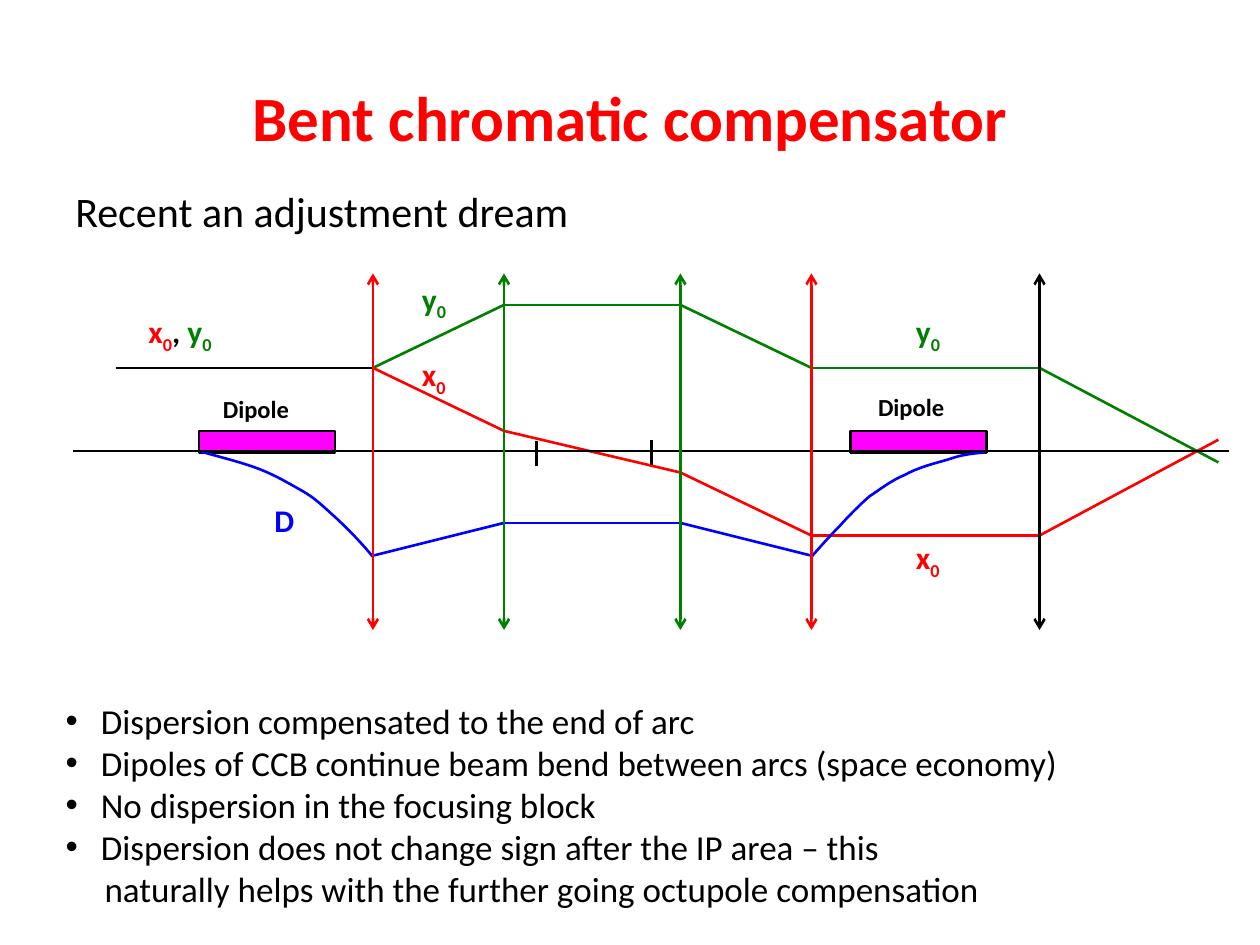
import lxml.etree
import pptx
import pptx.util
import pptx.dml.color
import pptx.enum.shapes
import pptx.enum.text
import pptx.oxml.ns
from dataclasses import dataclass
from pptx.util import Inches


@dataclass(frozen=True)
class Theme:
    font: str = "Calibri"
    black: str = "000000"
    red: str = "FF0000"
    green: str = "008000"
    blue: str = "0000FF"
    magenta: str = "FF00FF"
    title: int = 36
    heading: int = 24
    body: int = 20
    label: int = 18
    small: int = 14
    line: float = 1.5


T = Theme()


def rgb(color):
    return pptx.dml.color.RGBColor.from_string(color)


def add_xml(parent, tag, **attrs):
    lxml.etree.SubElement(parent, pptx.oxml.ns.qn(tag), attrs)


def bezier(p0, p1, p2, p3, steps=8):
    """Points along a cubic curve, without its first point."""
    points = []
    for i in range(1, steps + 1):
        t = i / steps
        weights = ((1 - t) ** 3, 3 * t * (1 - t) ** 2, 3 * t * t * (1 - t), t ** 3)
        points.append(tuple(sum(w * p[k] for w, p in zip(weights, (p0, p1, p2, p3)))
                            for k in (0, 1)))
    return points


class Painter:
    def __init__(self, slide, theme):
        self.slide = slide
        self.shapes = slide.shapes
        self.theme = theme

    def place(self, sp, x, y, w, h):
        sp.left, sp.top, sp.width, sp.height = (Inches(v) for v in (x, y, w, h))

    def format(self, r, size, color, bold=False):
        r.font.name = self.theme.font
        r.font.size = pptx.util.Pt(size)
        r.font.bold = bold
        r.font.color.rgb = rgb(color)

    def outline(self, line, color):
        line.color.rgb = rgb(color)
        line.width = pptx.util.Pt(self.theme.line)

    def title(self, text, box):
        sp = self.shapes.title
        self.place(sp, *box)
        sp.text_frame.text = text
        self.format(sp.text_frame.paragraphs[0].runs[0], self.theme.title,
                    self.theme.red, bold=True)

    def bullets(self, items, box, indent):
        """Items are (text, bulleted) pairs."""
        sp = self.slide.placeholders[1]
        self.place(sp, *box)
        tf = sp.text_frame
        tf.text = "\n".join(text for text, _ in items)
        for p, (_, bulleted) in zip(tf.paragraphs, items):
            margin = indent if bulleted else indent + 0.03
            pPr = p._p.get_or_add_pPr()
            pPr.set("marL", str(Inches(margin)))
            pPr.set("indent", str(Inches(-indent if bulleted else 0)))
            p.space_before = pptx.util.Pt(0)
            if not bulleted:
                add_xml(pPr, "a:buNone")
            self.format(p.runs[0], self.theme.body, self.theme.black)

    def text(self, parts, box, size, bold=True, wrap=True):
        """Parts are (text, color, subscript) triples."""
        tf = self.shapes.add_textbox(*(Inches(v) for v in box)).text_frame
        tf.word_wrap = wrap
        for text, color, subscript in parts:
            r = tf.paragraphs[0].add_run()
            r.text = text
            self.format(r, size, color, bold)
            if subscript:
                r._r.get_or_add_rPr().set("baseline", "-25000")

    def line(self, start, end, color, arrows=False):
        cxn = self.shapes.add_connector(pptx.enum.shapes.MSO_CONNECTOR.STRAIGHT,
                                        *(Inches(v) for v in (*start, *end)))
        self.outline(cxn.line, color)
        if arrows:
            ln = cxn._element.spPr.find(pptx.oxml.ns.qn("a:ln"))
            for tag in ("a:headEnd", "a:tailEnd"):
                add_xml(ln, tag, type="arrow")
        add_xml(cxn._element.spPr, "a:effectLst")

    def trace(self, points, color):
        for start, end in zip(points, points[1:]):
            self.line(start, end, color)

    def rect(self, box, fill):
        sp = self.shapes.add_shape(pptx.enum.shapes.MSO_SHAPE.RECTANGLE,
                                   *(Inches(v) for v in box))
        sp.shadow.inherit = False
        sp.fill.solid()
        sp.fill.fore_color.rgb = rgb(fill)
        self.outline(sp.line, self.theme.black)

    def curve(self, knots, color):
        """Knots are a start point followed by three points per cubic piece."""
        points = [knots[0]]
        for i in range(0, len(knots) - 1, 3):
            points += bezier(*knots[i:i + 4])
        points = [(Inches(x), Inches(y)) for x, y in points]
        fb = self.shapes.build_freeform(*points[0])
        fb.add_line_segments(points[1:], close=False)
        sp = fb.convert_to_shape()
        sp.shadow.inherit = False
        sp.fill.background()
        self.outline(sp.line, color)


def main():
    prs = pptx.Presentation()
    prs.slide_width, prs.slide_height = Inches(10), Inches(7.5)
    s = Painter(prs.slides.add_slide(prs.slide_layouts[1]), T)

    # Headings
    s.title("Bent chromatic compensator", (0.5, 0.3, 9, 1.25))
    s.text([("Recent an adjustment dream", T.black, False)], (0.5, 1.42, 5, 0.5),
           T.heading, bold=False)

    # Lens positions and beam levels
    x1, x2, x3, x4, x5 = 2.96, 4, 5.4, 6.44, 8.25
    x_end, axis, beam = 9.67, 3.58, 2.92

    # Dipoles with their labels
    for x, label_x, label_y in ((1.58, 1.67, 3.08), (6.75, 6.87, 3.06)):
        s.rect((x, 3.42, 1.08, 0.17), T.magenta)
        s.text([("Dipole", T.black, False)], (label_x, label_y, 0.79, 0.33),
               T.small, wrap=False)

    # Beam trajectories
    s.line((0.92, beam), (x1, beam), T.black)
    s.trace([(x1, beam), (x2, 2.42), (x3, 2.42), (x4, beam), (x5, beam),
             (x_end, 3.67)], T.green)
    s.trace([(x1, beam), (x2, 3.42), (x3, 3.75), (x4, 4.25), (x5, 4.25),
             (x_end, 3.49)], T.red)

    # Dispersion
    s.curve([(1.58, axis), (1.75, 3.63), (1.92, 3.67), (2.05, 3.72),
             (2.18, 3.77), (2.28, 3.83), (2.37, 3.88),
             (2.46, 3.93), (2.5, 3.96), (2.6, 4.05),
             (2.7, 4.14), (2.82, 4.25), (x1, 4.42)], T.blue)
    s.trace([(x1, 4.41), (x2, 4.15), (x3, 4.15), (x4, 4.41)], T.blue)
    s.curve([(x4, 4.42), (6.51, 4.34), (6.58, 4.26), (6.66, 4.18),
             (6.73, 4.1), (6.82, 4.01), (6.9, 3.94),
             (6.99, 3.88), (7.08, 3.81), (7.18, 3.77),
             (7.27, 3.72), (7.37, 3.69), (7.48, 3.66),
             (7.59, 3.63), (7.6, 3.61), (7.82, 3.59)], T.blue)

    # Axis with tick marks
    s.line((0.58, axis), (9.75, axis), T.black)
    for x, y in ((4.26, 3.5), (5.17, 3.49)):
        s.line((x, y), (x, y + 0.2), T.black)

    # Lenses
    for x, color in ((x1, T.red), (x2, T.green), (x3, T.green), (x4, T.red),
                     (x5, T.black)):
        s.line((x, 2.17), (x, 5), color, arrows=True)

    # Trajectory labels
    x0 = [("x", T.red, False), ("0", T.red, True)]
    y0 = [("y", T.green, False), ("0", T.green, True)]
    for parts, x, y in ((x0 + [(", ", T.black, False)] + y0, 1.08, 2.43),
                        (y0, 7.17, 2.43), (x0, 7.17, 4.22),
                        (y0, 3.25, 2.17), (x0, 3.25, 2.77)):
        s.text(parts, (x, y, 0.92, 0.4), T.label)
    s.text([("D", T.blue, False)], (2.08, 3.93, 0.38, 0.4), T.label, wrap=False)

    # Conclusions
    s.bullets([("Dispersion compensated to the end of arc", True),
               ("Dipoles of CCB continue beam bend between arcs (space economy)", True),
               ("No dispersion in the focusing block", True),
               ("Dispersion does not change sign after the IP area – this", True),
               ("naturally helps with the further going octupole compensation", False)],
              (0.42, 5.5, 8.5, 1.78), indent=0.28)

    prs.save("out.pptx")


if __name__ == "__main__":
    main()
